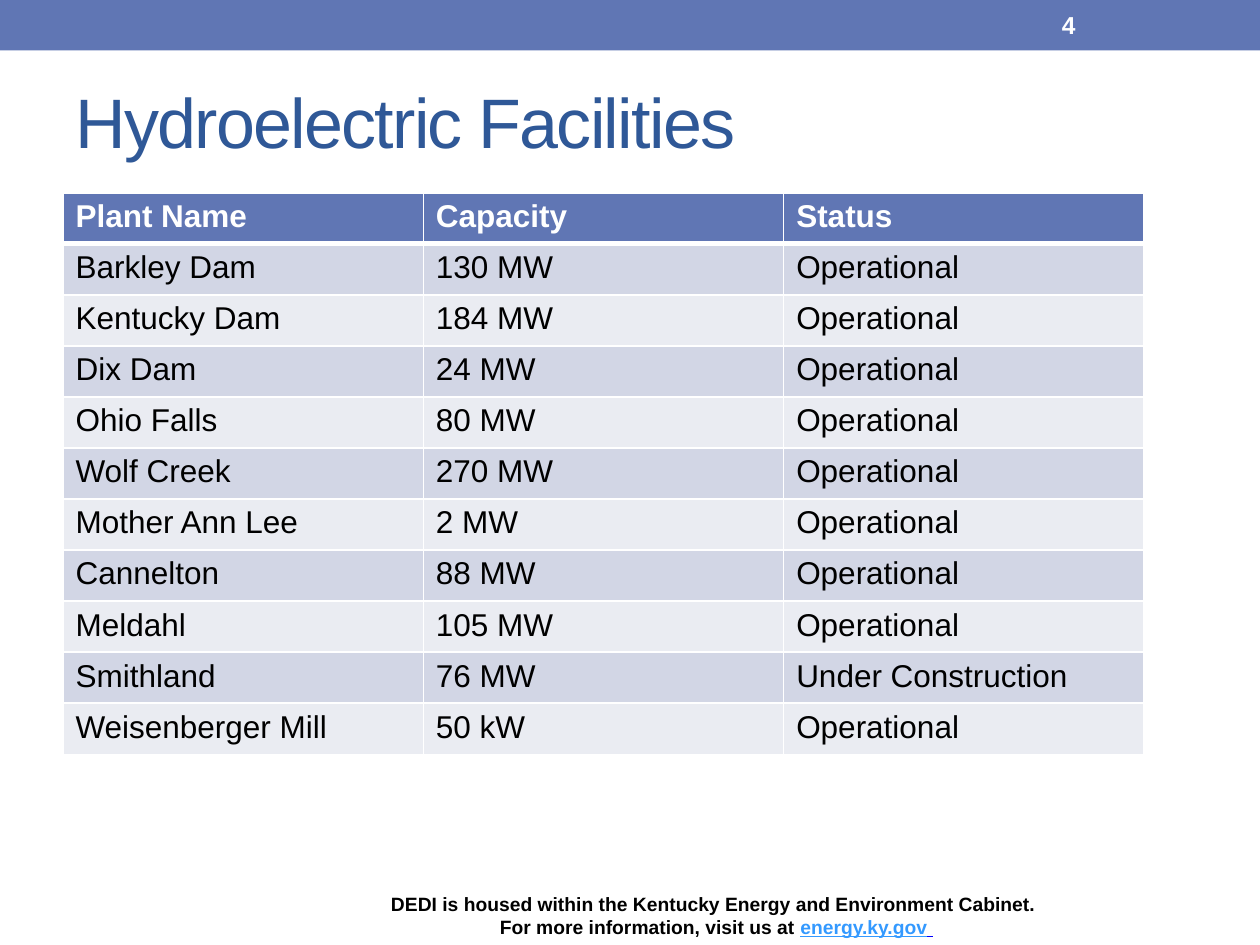
from lxml.etree import SubElement
from pptx import Presentation
from pptx.dml.color import RGBColor
from pptx.enum.shapes import MSO_SHAPE
from pptx.enum.text import MSO_ANCHOR, MSO_AUTO_SIZE, PP_ALIGN
from pptx.oxml.ns import qn
from pptx.util import Inches, Pt

BLUE, NAVY, LINK = "6076B4", "2F5897", "3399FF"
WHITE, BLACK = "FFFFFF", "000000"
BANDS = ("D2D6E5", "EAECF2")

HEADER = ("Plant Name", "Capacity", "Status")
PLANTS = [
    ("Barkley Dam", "130 MW", "Operational"),
    ("Kentucky Dam", "184 MW", "Operational"),
    ("Dix Dam", "24 MW", "Operational"),
    ("Ohio Falls", "80 MW", "Operational"),
    ("Wolf Creek", "270 MW", "Operational"),
    ("Mother Ann Lee", "2 MW", "Operational"),
    ("Cannelton", "88 MW", "Operational"),
    ("Meldahl", "105 MW", "Operational"),
    ("Smithland", "76 MW", "Under Construction"),
    ("Weisenberger Mill", "50 kW", "Operational"),
]


def rgb(color):
    return RGBColor.from_string(color)


def add_run(paragraph, text, size, color, **formats):
    run = paragraph.add_run()
    run.text = text
    values = {"name": "Arial", "size": Pt(size), "bold": False, **formats}
    for attribute, value in values.items():
        setattr(run.font, attribute, value)
    run.font.color.rgb = rgb(color)
    return run


def add_bar(slide):
    bar = slide.shapes.add_shape(MSO_SHAPE.RECTANGLE, 0, 0, Inches(10), Inches(0.4))
    bar.shadow.inherit = False
    bar.fill.solid()
    bar.fill.fore_color.rgb = rgb(BLUE)
    bar.line.fill.background()


def set_title(slide, text):
    title = slide.shapes.title
    box = {"left": 0.5, "top": 0.42, "width": 9, "height": 1.08}
    for attribute, value in box.items():
        setattr(title, attribute, Inches(value))
    frame = title.text_frame
    frame.auto_size = MSO_AUTO_SIZE.NONE
    frame.vertical_anchor = MSO_ANCHOR.MIDDLE
    paragraph = frame.paragraphs[0]
    paragraph.alignment = PP_ALIGN.LEFT
    run = add_run(paragraph, text, 40, NAVY)
    run.font._element.set("spc", "-100")  # tighter letter spacing


def add_text_box(slide, left, top, width, height, anchor=MSO_ANCHOR.TOP):
    box = slide.shapes.add_textbox(*map(Inches, (left, top, width, height)))
    frame = box.text_frame
    frame.word_wrap = True
    frame.vertical_anchor = anchor
    return frame


def add_footer(slide):
    frame = add_text_box(slide, 1.77, 7.03, 7.83, 0.45)
    lines = [
        [("DEDI is housed within the Kentucky Energy and Environment Cabinet. ", BLACK, False)],
        [("For more information, visit us at ", BLACK, False),
         ("energy.ky.gov", LINK, True),
         (" ", "0000FF", True)],
    ]
    for index, runs in enumerate(lines):
        paragraph = frame.add_paragraph() if index else frame.paragraphs[0]
        paragraph.alignment = PP_ALIGN.CENTER
        for text, color, underline in runs:
            add_run(paragraph, text, 11, color, bold=True, underline=underline)


def set_borders(cell, top, bottom):
    properties = cell._tc.get_or_add_tcPr()
    for side, points in {"L": 1, "R": 1, "T": top, "B": bottom}.items():
        line = SubElement(properties, qn(f"a:ln{side}"), w=str(Pt(points)))
        fill = SubElement(line, qn("a:solidFill"))
        SubElement(fill, qn("a:srgbClr"), val=WHITE)


def add_plant_table(slide):
    rows = [HEADER, *PLANTS]
    table = slide.shapes.add_table(
        len(rows), len(HEADER), Inches(0.5), Inches(1.53), Inches(8.58), Inches(4.46)
    ).table
    for row_index, values in enumerate(rows):
        is_header = row_index == 0
        fill = BLUE if is_header else BANDS[(row_index - 1) % 2]
        for column_index, text in enumerate(values):
            cell = table.cell(row_index, column_index)
            # A thick rule separates the header from the first plant
            set_borders(cell, top=3 if row_index == 1 else 1, bottom=3 if is_header else 1)
            cell.fill.solid()
            cell.fill.fore_color.rgb = rgb(fill)
            add_run(cell.text_frame.paragraphs[0], text, 18,
                    WHITE if is_header else BLACK, bold=is_header)


def main():
    presentation = Presentation()
    presentation.slide_width, presentation.slide_height = Inches(10), Inches(7.5)
    slide = presentation.slides.add_slide(presentation.slide_layouts[5])

    # Top bar, footer and title
    add_bar(slide)
    add_footer(slide)
    set_title(slide, "Hydroelectric Facilities")

    # Slide number
    number = add_text_box(slide, 8.33, 0.02, 1.17, 0.36, MSO_ANCHOR.MIDDLE)
    add_run(number.paragraphs[0], "4", 14, WHITE, bold=True)

    # Facilities
    add_plant_table(slide)
    presentation.save("out.pptx")


if __name__ == "__main__":
    main()
